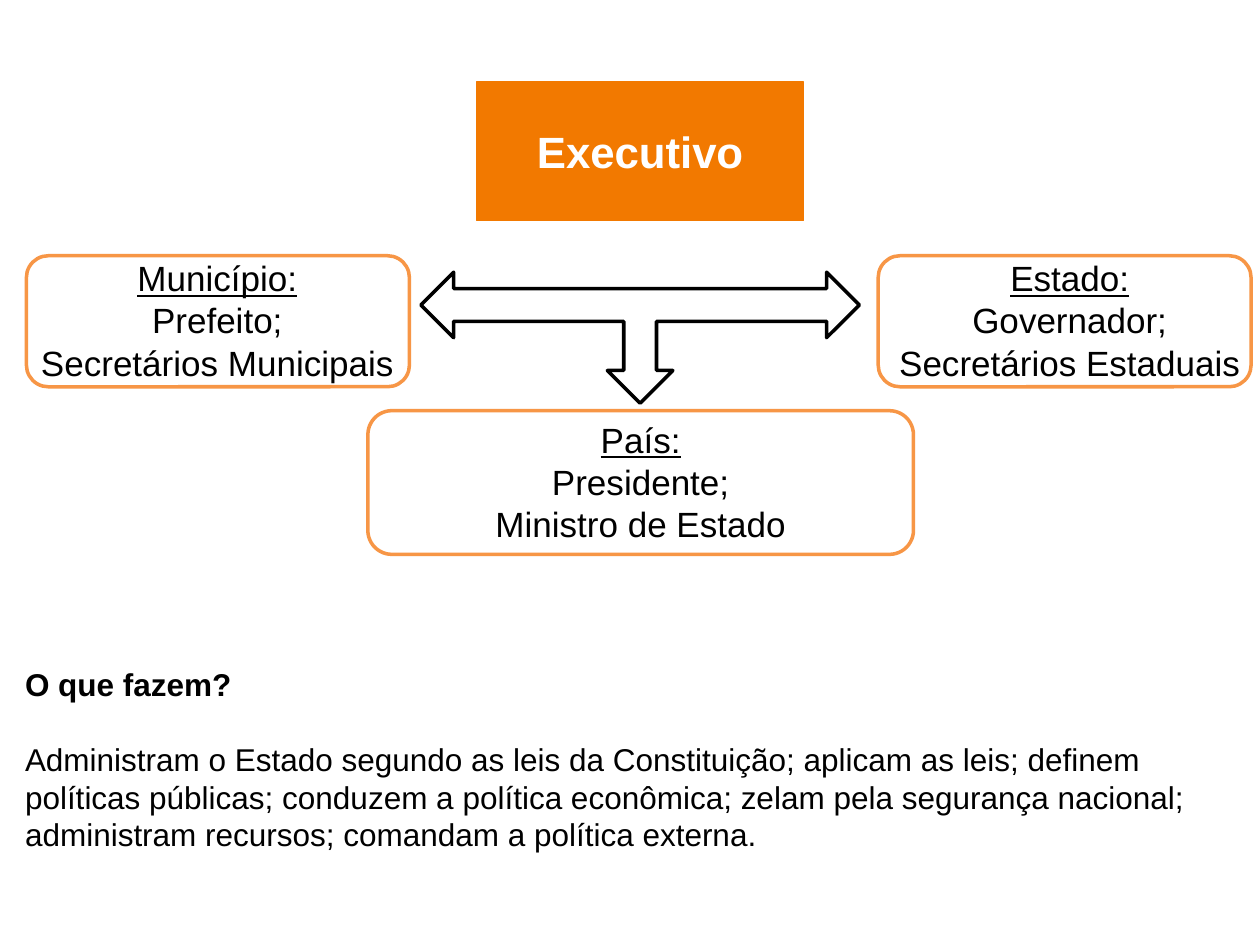
from lxml import etree
from pptx import Presentation
from pptx import util as u
from pptx.dml.color import RGBColor
from pptx.enum import shapes, text
from pptx.oxml import ns

COLORS = {"orange": "F27900", "border": "F79646", "black": "000000", "white": "FFFFFF"}
FONT = "Arial"

BRANCHES = [
    ((2.92, 3.26, 4.33, 1.14), (3.07, 3.27, 4.03, 1.11),
     ["País:", "Presidente;", "Ministro de Estado"]),
    ((0.21, 2.03, 3.04, 1.04), (0.13, 1.99, 3.19, 1.11),
     ["Município:", "Prefeito;", "Secretários Municipais"]),
    ((6.97, 2.03, 2.96, 1.04), (6.98, 1.99, 3.02, 1.11),
     ["Estado:", "Governador;", "Secretários Estaduais"]),
]
DUTIES = [
    "O que fazem?",
    "Administram o Estado segundo as leis da Constituição; aplicam as leis; "
    "definem políticas públicas; conduzem a política econômica; zelam pela "
    "segurança nacional; administram recursos; comandam a política externa.",
]


def rgb(name):
    return RGBColor.from_string(COLORS[name])


def inches(box):
    return [u.Inches(v) for v in box]


def paint(sp, fill, line, width):
    if fill:
        sp.fill.solid()
        sp.fill.fore_color.rgb = rgb(fill)
    else:
        sp.fill.background()
    sp.line.color.rgb = rgb(line)
    sp.line.width = u.Pt(width)


def format_paragraph(p, size, color="black", bold=False, underline=False,
                     align=text.PP_ALIGN.LEFT):
    p.alignment = align
    for r in p.runs:
        r.font.name = FONT
        r.font.size = u.Pt(size)
        r.font.bold = bold
        r.font.underline = underline
        r.font.color.rgb = rgb(color)


def add_title(s, title, box):
    sp = s.shapes.title
    sp.left, sp.top, sp.width, sp.height = inches(box)
    etree.SubElement(sp._element.spPr, ns.qn("a:prstGeom"),
                     prst="flowChartAlternateProcess")
    paint(sp, "orange", "orange", 0.75)
    tf = sp.text_frame
    tf.text = title
    tf.word_wrap = False
    tf.auto_size = text.MSO_AUTO_SIZE.NONE
    tf.vertical_anchor = text.MSO_ANCHOR.MIDDLE
    format_paragraph(tf.paragraphs[0], 25, "white", bold=True,
                     align=text.PP_ALIGN.CENTER)


def add_outline(s, kind, box, fill, line):
    sp = s.shapes.add_shape(kind, *inches(box))
    sp.shadow.inherit = False
    paint(sp, fill, line, 2)
    return sp


def add_text(s, lines, box):
    tf = s.shapes.add_textbox(*inches(box)).text_frame
    tf.word_wrap = True
    tf.text = "\n".join(lines)
    return tf.paragraphs


def add_branch(s, frame, label, lines):
    add_outline(s, shapes.MSO_SHAPE.ROUNDED_RECTANGLE, frame, None, "border")
    for i, p in enumerate(add_text(s, lines, label)):
        format_paragraph(p, 20, underline=i == 0, align=text.PP_ALIGN.CENTER)


def add_duties(s, lines, box):
    heading, body = add_text(s, lines, box)
    format_paragraph(heading, 18, bold=True)
    format_paragraph(body, 18)
    body.space_before = u.Pt(21)


def main():
    prs = Presentation()
    prs.slide_width, prs.slide_height = u.Inches(10), u.Inches(7.5)
    s = prs.slides.add_slide(prs.slide_layouts[5])
    add_title(s, "Executivo", (3.78, 0.65, 2.6, 1.1))
    for frame, label, lines in BRANCHES:
        add_branch(s, frame, label, lines)
    arrow = add_outline(s, shapes.MSO_SHAPE.LEFT_RIGHT_UP_ARROW,
                        (3.34, 2.16, 3.48, 1.04), "white", "black")
    arrow.rotation = 180
    add_duties(s, DUTIES, (0.1, 5.23, 9.79, 1.92))
    prs.save("out.pptx")


if __name__ == "__main__":
    main()
